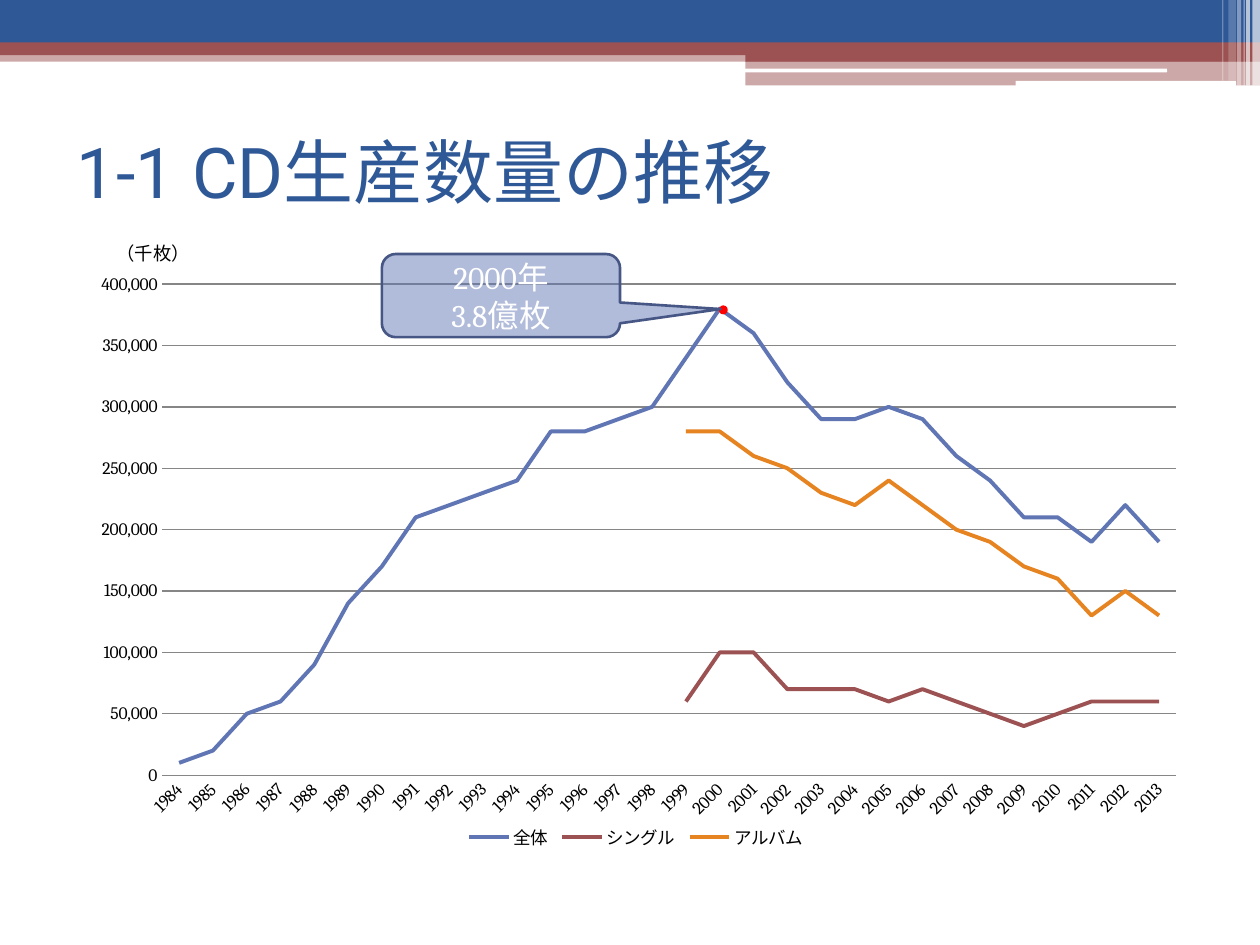
from dataclasses import dataclass

from lxml import etree
from pptx import Presentation
from pptx.chart.data import CategoryChartData
from pptx.dml.color import RGBColor
from pptx.enum.chart import XL_CHART_TYPE, XL_LEGEND_POSITION, XL_TICK_MARK
from pptx.enum.shapes import MSO_SHAPE
from pptx.enum.text import MSO_ANCHOR, PP_ALIGN
from pptx.oxml.ns import qn
from pptx.util import Pt

RECT = MSO_SHAPE.RECTANGLE
ROUND = MSO_SHAPE.ROUNDED_RECTANGLE
OVAL = MSO_SHAPE.OVAL
CALLOUT = MSO_SHAPE.ROUNDED_RECTANGULAR_CALLOUT
NO_TICKS = XL_TICK_MARK.NONE

BLUE, RED, WHITE, BLACK = "2F5897", "9C5252", "FFFFFF", "000000"
SERIES_BLUE, ORANGE, GRAY = "6076B4", "E68422", "868686"
TITLE_FONT, BODY_FONT = "Roboto", "Cambria"
TITLE_LAYOUT = 5


@dataclass
class Block:
    """A filled shape; lengths in points, opacity in percent."""
    left: float
    top: float
    width: float
    height: float
    color: str
    opacity: int = 100
    kind: int = RECT
    line: str | None = None


@dataclass
class Series:
    name: str
    color: str
    first_year: int
    ten_thousands: list[int]


HEADER = [
    Block(0, 28.8, 720, 6.5, RED, 50),
    Block(0, 0, 720, 24.5, BLUE),
    Block(0, 24.3, 720, 7.2, RED),
    Block(426, 28, 294, 7.2, RED),
    Block(426, 34.9, 294, 14, RED, 50),
    Block(425.5, 39.2, 241.4, 2.2, WHITE, kind=ROUND),
    Block(580.3, 46.2, 126, 2.9, WHITE, kind=ROUND),
    Block(715.7, 0, 4.3, 49, WHITE, 65),
    Block(712.1, 0, 2.2, 49, WHITE, 65),
    Block(710.6, 0, 0.7, 49, WHITE, 60),
    Block(707, 0, 2.2, 49, WHITE, 40),
    Block(702, 0, 4.3, 46.1, WHITE, 20),
    Block(698.4, 0, 0.7, 46.1, WHITE, 30),
]

YEARS = range(1984, 2014)
PRODUCTION = [
    Series("全体", SERIES_BLUE, 1984, [
        1, 2, 5, 6, 9, 14, 17, 21, 22, 23, 24, 28, 28, 29, 30,
        34, 38, 36, 32, 29, 29, 30, 29, 26, 24, 21, 21, 19, 22, 19]),
    Series("シングル", RED, 1999, [
        6, 10, 10, 7, 7, 7, 6, 7, 6, 5, 4, 5, 6, 6, 6]),
    Series("アルバム", ORANGE, 1999, [
        28, 28, 26, 25, 23, 22, 24, 22, 20, 19, 17, 16, 13, 15, 13]),
]


def rgb(color: str) -> RGBColor:
    return RGBColor.from_string(color)


def draw_block(slide, block: Block):
    shape = slide.shapes.add_shape(
        block.kind, Pt(block.left), Pt(block.top), Pt(block.width), Pt(block.height))
    shape.shadow.inherit = False
    shape.fill.solid()
    shape.fill.fore_color.rgb = rgb(block.color)
    if block.opacity < 100:
        color = shape.fill._xPr.find(".//" + qn("a:srgbClr"))
        etree.SubElement(color, qn("a:alpha"), val=str(block.opacity * 1000))
    if block.line:
        shape.line.color.rgb = rgb(block.line)
        shape.line.width = Pt(1.5)
    else:
        shape.line.fill.background()
    return shape


def write(frame, text: str, font: str, size: float, color: str, align=PP_ALIGN.LEFT) -> None:
    frame.text = text
    for para in frame.paragraphs:
        para.alignment = align
        for span in para.runs:
            span.font.name = font
            span.font.size = Pt(size)
            span.font.color.rgb = rgb(color)


def place_part(part, index: int, x: float, y: float, width: float, height: float,
               target: str | None = None) -> None:
    """Fix a chart part, in fractions of the chart; index is where its layout belongs."""
    layout = part.find(qn("c:layout"))
    if layout is None:
        layout = etree.Element(qn("c:layout"))
        part.insert(index, layout)
    manual = etree.SubElement(layout, qn("c:manualLayout"))
    settings = {"layoutTarget": target} if target else {}
    settings |= {"xMode": "edge", "yMode": "edge", "x": x, "y": y, "w": width, "h": height}
    for name, value in settings.items():
        etree.SubElement(manual, qn("c:" + name), val=str(value))


def draw_chart(slide) -> None:
    data = CategoryChartData(number_format="#,##0")
    data.categories = [str(year) for year in YEARS]
    for series in PRODUCTION:
        missing = [None] * (series.first_year - YEARS[0])
        data.add_series(series.name, missing + [value * 10000 for value in series.ten_thousands])
    chart = slide.shapes.add_chart(
        XL_CHART_TYPE.LINE, Pt(36.4), Pt(133.6), Pt(647.3), Pt(355.7), data).chart
    chart.has_title = False
    chart.font.name = BODY_FONT
    chart.font.size = Pt(10)
    chart.font.color.rgb = rgb(BLACK)
    chart.has_legend = True
    chart.legend.position = XL_LEGEND_POSITION.BOTTOM
    chart.legend.include_in_layout = False
    plot_area = chart._chartSpace.find(".//" + qn("c:plotArea"))
    place_part(plot_area, 0, 0.087, 0.081, 0.895, 0.789, "inner")
    place_part(chart.legend._element, 1, 0.35, 0.94, 0.31, 0.06)

    plot = chart.plots[0]
    plot.vary_by_categories = False
    for line, series in zip(plot.series, PRODUCTION):
        line.smooth = False
        line.format.line.color.rgb = rgb(series.color)
        line.format.line.width = Pt(2.25)

    values, years = chart.value_axis, chart.category_axis
    for axis in (values, years):
        axis.major_tick_mark = axis.minor_tick_mark = NO_TICKS
    values.minimum_scale, values.maximum_scale, values.major_unit = 0, 400000, 50000
    values.tick_labels.number_format = "#,##0"
    values.tick_labels.number_format_is_linked = False
    values.format.line.fill.background()
    for line in (values.major_gridlines.format.line, years.format.line):
        line.color.rgb = rgb(GRAY)
        line.width = Pt(0.75)
    years.tick_labels.font.size = Pt(10)
    years._element.find(".//" + qn("a:bodyPr")).set("rot", "-2700000")


def main() -> None:
    deck = Presentation()
    deck.slide_width, deck.slide_height = Pt(720), Pt(540)
    slide = deck.slides.add_slide(deck.slide_layouts[TITLE_LAYOUT])
    for block in HEADER:
        draw_block(slide, block)

    title = slide.shapes.title
    title.left, title.top, title.width, title.height = Pt(36.7), Pt(49), Pt(648), Pt(96.5)
    title.text_frame.vertical_anchor = MSO_ANCHOR.MIDDLE
    write(title.text_frame, "1-1 CD生産数量の推移", TITLE_FONT, 40, BLUE)

    draw_chart(slide)
    draw_block(slide, Block(411.5, 175.3, 3.6, 3.6, "FF0000", kind=OVAL, line="FF0000"))

    callout = draw_block(slide, Block(
        218.2, 145.2, 136.1, 47.5, SERIES_BLUE, 49, CALLOUT, "475785"))
    for index, value in enumerate((0.922, 0.162, 0.167)):
        callout.adjustments[index] = value
    callout.text_frame.vertical_anchor = MSO_ANCHOR.MIDDLE
    write(callout.text_frame, "2000年\n3.8億枚", BODY_FONT, 18, WHITE, PP_ALIGN.CENTER)

    unit = slide.shapes.add_textbox(Pt(59.6), Pt(134.6), Pt(62.6), Pt(20.9))
    unit.text_frame.word_wrap = True
    write(unit.text_frame, "（千枚）", BODY_FONT, 10.5, BLACK)
    deck.save("out.pptx")


if __name__ == "__main__":
    main()
